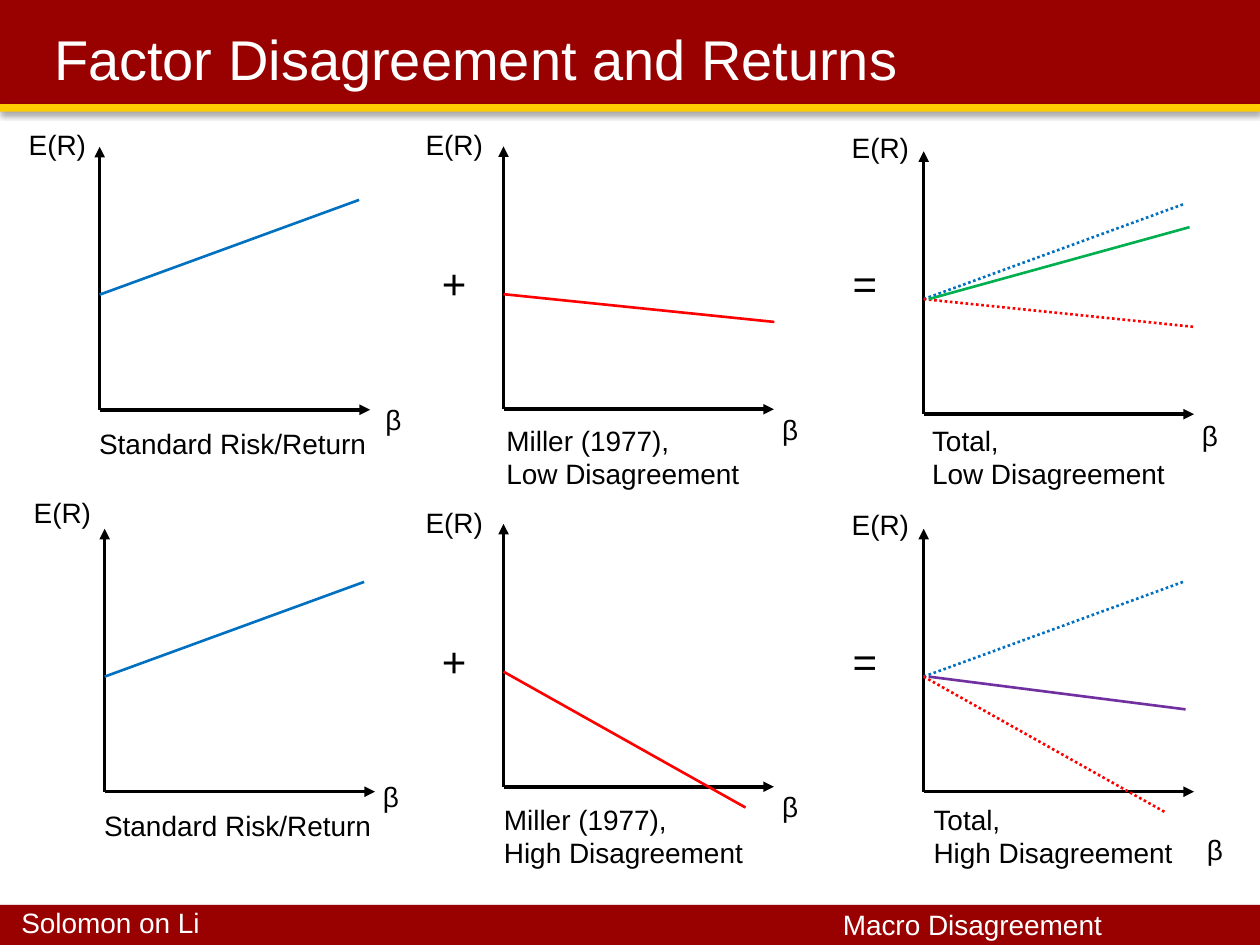
"""Build the slide that adds risk/return and disagreement lines into a total."""
from dataclasses import dataclass

from lxml import etree
from pptx import Presentation
from pptx import util as u
from pptx.dml import color
from pptx.enum import dml, shapes, text
from pptx.oxml import ns


@dataclass(frozen=True)
class Theme:
    font: str = "Arial"
    title_size: int = 32
    sign_size: int = 24
    label_size: int = 16
    axis_width: float = 2
    curve_width: float = 1.5
    ink: str = "000000"
    paper: str = "FFFFFF"
    bar: str = "990000"
    stripe: str = "FFCC00"
    standard: str = "0070C0"
    miller: str = "FF0000"
    total_low: str = "00B050"
    total_high: str = "7030A0"


class SlideBuilder:
    AXIS_LENGTH = 5.45
    AXIS_HEIGHT = 5.3
    INTERCEPT = 2.32

    def __init__(self, slide, theme):
        self.slide = slide
        self.theme = theme

    def bar(self, top, height, fill, shadow_alpha):
        shape = self.slide.shapes.add_shape(
            shapes.MSO_SHAPE.RECTANGLE, 0, u.Cm(top), u.Cm(25.4), u.Cm(height))
        shape.fill.solid()
        shape.fill.fore_color.rgb = color.RGBColor.from_string(fill)
        shape.line.fill.background()
        shape.shadow.inherit = False
        effects = shape._element.spPr.find(ns.qn("a:effectLst"))
        shadow = etree.SubElement(
            effects, ns.qn("a:outerShdw"), blurRad=str(u.Pt(3.1)),
            dist=str(u.Pt(1.8)), dir="5400000", rotWithShape="0")
        tint = etree.SubElement(shadow, ns.qn("a:srgbClr"), val=self.theme.ink)
        etree.SubElement(tint, ns.qn("a:alpha"), val=str(shadow_alpha * 1000))

    def words(self, lines, left, top, width, height=0.94, size=None, ink=None,
              wrap=True, inset=True, middle=False):
        box = self.slide.shapes.add_textbox(
            u.Cm(left), u.Cm(top), u.Cm(width), u.Cm(height))
        frame = box.text_frame
        frame.word_wrap = wrap
        if middle:
            frame.vertical_anchor = text.MSO_ANCHOR.MIDDLE
        else:
            frame.auto_size = text.MSO_AUTO_SIZE.SHAPE_TO_FIT_TEXT
        if not inset:
            frame.margin_left = frame.margin_right = 0
            frame.margin_top = frame.margin_bottom = 0
        for index, line in enumerate(lines):
            paragraph = frame.add_paragraph() if index else frame.paragraphs[0]
            run = paragraph.add_run()
            run.text = line
            run.font.name = self.theme.font
            run.font.size = u.Pt(size or self.theme.label_size)
            run.font.color.rgb = color.RGBColor.from_string(ink or self.theme.ink)

    def line(self, start, end, ink, width, dotted=False, arrow=False):
        connector = self.slide.shapes.add_connector(
            shapes.MSO_CONNECTOR.STRAIGHT, *(u.Cm(value) for value in (*start, *end)))
        connector.line.color.rgb = color.RGBColor.from_string(ink)
        connector.line.width = u.Pt(width)
        if dotted:
            connector.line.dash_style = dml.MSO_LINE.ROUND_DOT
        properties = connector._element.spPr
        if arrow:
            etree.SubElement(properties.find(ns.qn("a:ln")),
                             ns.qn("a:tailEnd"), type="triangle")
        etree.SubElement(properties, ns.qn("a:effectLst"))

    def chart_panel(self, origin, return_at, beta_at, caption, caption_at, curves):
        x, y = origin
        for end in ((x, y - self.AXIS_HEIGHT), (x + self.AXIS_LENGTH, y)):
            self.line(origin, end, self.theme.ink, self.theme.axis_width, arrow=True)
        for ink, shift, run, rise, dotted in curves:
            start = (x + shift, y - self.INTERCEPT)
            end = (start[0] + run, start[1] - rise)
            self.line(start, end, ink, self.theme.curve_width, dotted)
        self.words(["E(R)"], *return_at, 1.68, wrap=False)
        self.words(["β"], *beta_at, 1.42)
        self.words(caption, *caption_at, 6.73, 0.94 if len(caption) == 1 else 1.63)


def main():
    theme = Theme()
    presentation = Presentation()
    presentation.slide_width, presentation.slide_height = u.Cm(25.4), u.Cm(19.05)
    builder = SlideBuilder(
        presentation.slides.add_slide(presentation.slide_layouts[6]), theme)

    builder.bar(18.24, 0.81, theme.bar, 35)
    builder.bar(0, 2.1, theme.bar, 35)
    builder.bar(2.1, 0.15, theme.stripe, 38)
    for footer, left, top in (("Solomon on Li", 0.43, 18.26),
                              ("Macro Disagreement", 16.99, 18.29)):
        builder.words([footer], left, top, 8.3, 0.69, ink=theme.paper, inset=False)
    builder.words(["Factor Disagreement and Returns"], 0.84, 0.43, 22.86, 1.47,
                  theme.title_size, theme.paper, middle=True)

    standard = (theme.standard, 0, 5.23, 1.91, False)
    standard_dotted = (*standard[:-1], True)
    miller_low = (theme.miller, 0, 5.46, -0.56)
    miller_high = (theme.miller, 0, 4.88, -2.74)
    total_low = (theme.total_low, 0.1, 5.26, 1.45, False)
    total_high = (theme.total_high, 0.1, 5.18, -0.66, False)
    panels = (
        ((2.01, 8.26), (0.33, 2.44), (7.52, 8.0),
         ["Standard Risk/Return"], (1.75, 8.48), [standard]),
        ((10.15, 8.25), (8.33, 2.44), (15.52, 8.2),
         ["Miller (1977),", "Low Disagreement"], (9.96, 8.41),
         [(*miller_low, False)]),
        ((18.62, 8.35), (16.92, 2.51), (23.98, 8.31),
         ["Total,", "Low Disagreement"], (18.54, 8.41),
         [standard_dotted, (*miller_low, True), total_low]),
        ((2.11, 15.96), (0.43, 9.86), (7.47, 15.6),
         ["Standard Risk/Return"], (1.85, 16.18), [standard]),
        ((10.15, 15.86), (8.33, 10.06), (15.52, 15.8),
         ["Miller (1977),", "High Disagreement"], (9.91, 16.05),
         [(*miller_high, False)]),
        ((18.62, 15.96), (16.92, 10.11), (24.08, 16.66),
         ["Total,", "High Disagreement"], (18.57, 16.05),
         [standard_dotted, total_high, (*miller_high, True)]),
    )
    for panel in panels:
        builder.chart_panel(*panel)
    for row_top in (5.07, 12.68):
        for sign, left in (("+", 8.66), ("=", 16.94)):
            builder.words([sign], left, row_top, 1.4, 1.27, theme.sign_size)

    presentation.save("out.pptx")


if __name__ == "__main__":
    main()
